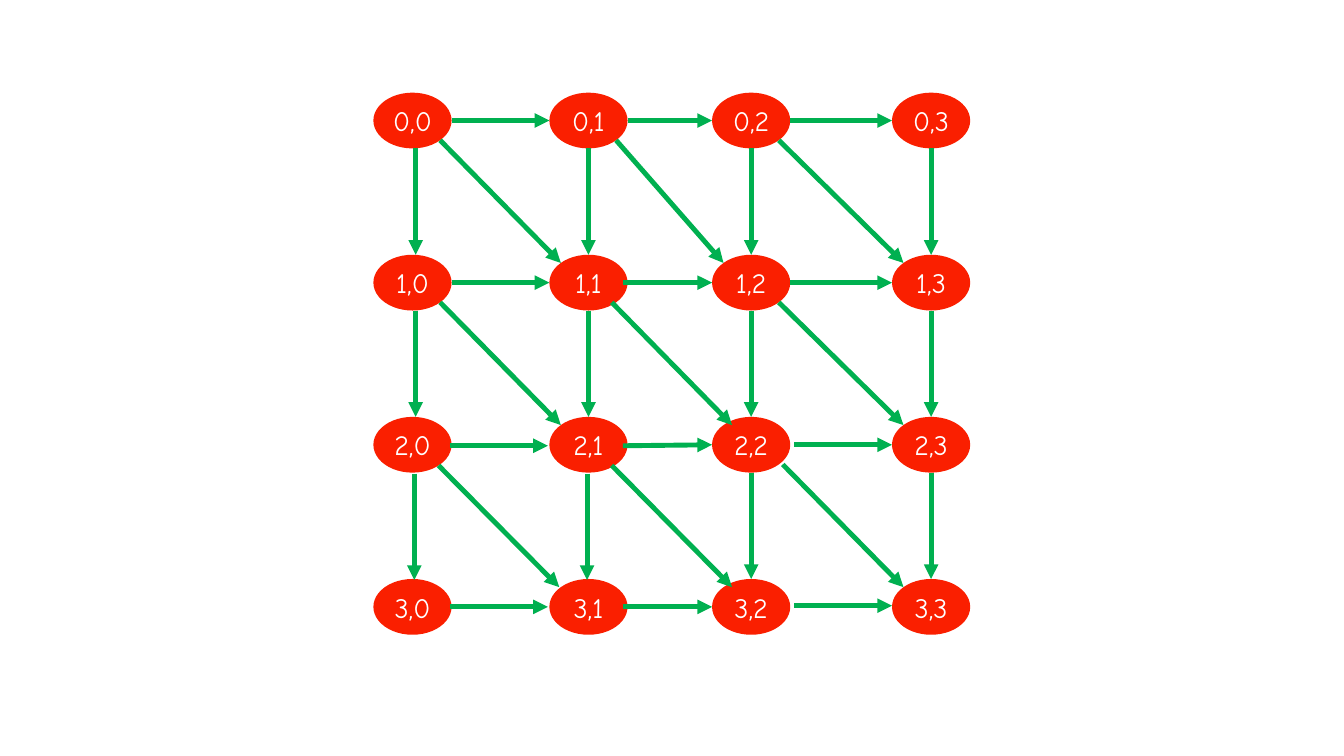
"""Build a slide with a four by four grid of cells and the arrows between them."""
from math import hypot

from lxml import etree
from pptx import Presentation
from pptx.dml.color import RGBColor
from pptx.enum.shapes import MSO_CONNECTOR, MSO_SHAPE
from pptx.enum.text import MSO_ANCHOR, MSO_AUTO_SIZE, PP_ALIGN
from pptx.oxml.ns import qn
from pptx.util import Cm, Pt

STRAIGHT = MSO_CONNECTOR.STRAIGHT
OVAL = MSO_SHAPE.OVAL
MIDDLE = MSO_ANCHOR.MIDDLE
FIT_SHAPE = MSO_AUTO_SIZE.SHAPE_TO_FIT_TEXT
CENTER = PP_ALIGN.CENTER

RED = RGBColor(0xFA, 0x1F, 0x00)
GREEN = RGBColor(0x00, 0xB0, 0x50)
WHITE = RGBColor(0xFF, 0xFF, 0xFF)

CELL_WIDTH, CELL_HEIGHT = 3.94, 2.81
COLUMN_LEFTS = [18.82, 27.69, 35.89, 44.96]
ROW_TOPS = [4.67 + 8.17 * row for row in range(4)]
RIGHT, DOWN, DIAGONAL = (0, 1), (1, 0), (1, 1)

NUDGES = {
    (0, 0, DOWN): (0.16, 0, 0.16, 0),
    (1, 0, DOWN): (0.16, 0, 0.16, 0),
    (2, 0, DOWN): (0.09, 0.05, 0.09, 0.05),
    (2, 1, DOWN): (-0.07, 0.05, -0.07, 0.05),
    (2, 0, RIGHT): (-0.08, 0.05, -0.08, 0.05),
    (3, 0, RIGHT): (-0.08, 0, -0.08, 0),
    (1, 1, RIGHT): (-0.24, 0, 0, 0),
    (2, 1, RIGHT): (-0.24, 0.05, 0, 0),
    (3, 1, RIGHT): (-0.24, 0, 0, 0),
    (2, 2, RIGHT): (0.2, 0, 0, 0),
    (3, 2, RIGHT): (0.2, -0.06, 0, -0.06),
    (2, 0, DIAGONAL): (-0.08, 0.05, -0.08, 0),
    (1, 1, DIAGONAL): (-0.22, 0, 0.43, 0),
    (2, 1, DIAGONAL): (-0.22, 0.05, 0.43, 0),
    (2, 2, DIAGONAL): (0.2, 0, 0, 0),
}


def write_text(shape, text, size=40, font="Comic Neue", color=WHITE, inset=0.15):
    frame = shape.text_frame
    frame.word_wrap = True
    frame.auto_size = FIT_SHAPE
    frame.vertical_anchor = MIDDLE
    frame.margin_left = frame.margin_right = Cm(inset)
    frame.margin_top = frame.margin_bottom = Cm(inset)
    paragraph = frame.paragraphs[0]
    paragraph.alignment = CENTER
    run = paragraph.add_run()
    run.text = text
    run.font.size = Pt(size)
    run.font.name = font
    run.font.color.rgb = color


def add_arrow(slide, start_x, start_y, end_x, end_y):
    arrow = slide.shapes.add_connector(
        STRAIGHT, Cm(start_x), Cm(start_y), Cm(end_x), Cm(end_y))
    arrow.line.color.rgb = GREEN
    arrow.line.width = Pt(7)
    etree.SubElement(arrow.line._get_or_add_ln(), qn("a:tailEnd"), type="triangle")
    etree.SubElement(arrow._element.spPr, qn("a:effectLst"))


presentation = Presentation()
presentation.slide_width = Cm(67.74)
presentation.slide_height = Cm(38.1)
slide = presentation.slides.add_slide(presentation.slide_layouts[6])

for row, top in enumerate(ROW_TOPS):
    for column, left in enumerate(COLUMN_LEFTS):
        cell = slide.shapes.add_shape(
            OVAL, Cm(left), Cm(top), Cm(CELL_WIDTH), Cm(CELL_HEIGHT))
        cell.shadow.inherit = False
        cell.fill.solid()
        cell.fill.fore_color.rgb = RED
        cell.line.fill.background()
        write_text(cell, f"{row},{column}")

centers_x = [left + CELL_WIDTH / 2 for left in COLUMN_LEFTS]
centers_y = [top + CELL_HEIGHT / 2 for top in ROW_TOPS]

for row in range(4):
    for column in range(4):
        for step in (RIGHT, DOWN, DIAGONAL):
            down, right = step
            if row + down > 3 or column + right > 3:
                continue
            reach = 0.5 / hypot(down, right)
            edge_x = right * reach * CELL_WIDTH
            edge_y = down * reach * CELL_HEIGHT
            start_dx, start_dy, end_dx, end_dy = NUDGES.get((row, column, step), (0, 0, 0, 0))
            add_arrow(
                slide,
                centers_x[column] + edge_x + start_dx,
                centers_y[row] + edge_y + start_dy,
                centers_x[column + right] - edge_x + end_dx,
                centers_y[row + down] - edge_y + end_dy)

presentation.save("out.pptx")
